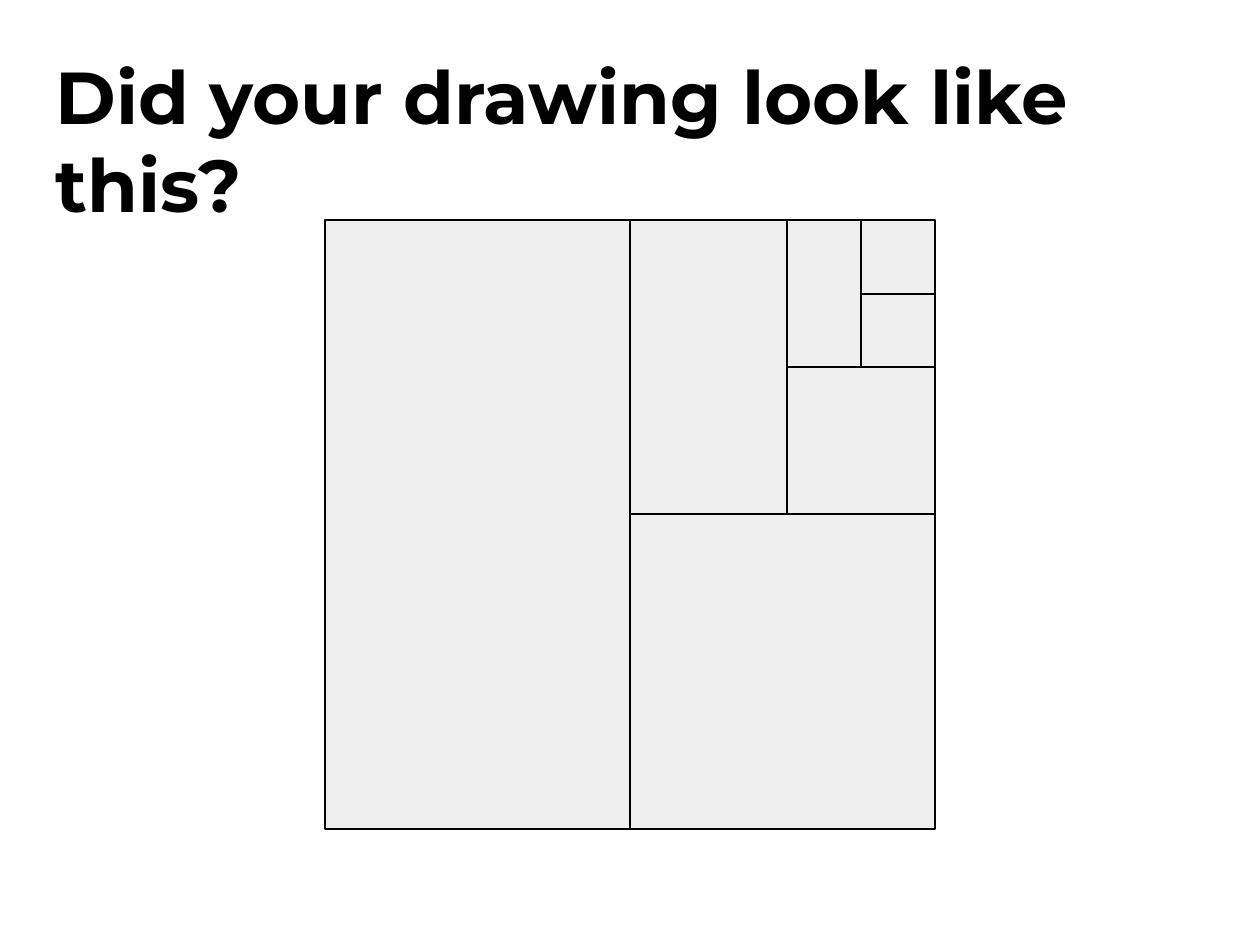
from lxml import etree
from pptx import Presentation, util as u
from pptx.dml.color import RGBColor
from pptx.enum import shapes, text
from pptx.oxml.ns import qn

PX = 914400 / 126
BLACK = RGBColor(0x00, 0x00, 0x00)
WHITE = RGBColor(0xFF, 0xFF, 0xFF)
PAPER = RGBColor(0xEF, 0xEF, 0xEF)

# Edges of the square sheet
LEFT, TOP, RIGHT, BOTTOM = 325, 220, 935, 829
# Each fold cuts the remaining top right corner: a vertical x, then a horizontal y
FOLDS = [(630, 514), (787, 367), (861, 294)]


def px(length):
    return u.Emu(round(length * PX))


def add_text(slide, words, left, top, width, height, *, font, size, color, bold=False):
    box = slide.shapes.add_textbox(px(left), px(top), px(width), px(height))
    frame = box.text_frame
    frame.word_wrap = True
    frame.vertical_anchor = text.MSO_ANCHOR.MIDDLE
    run = frame.paragraphs[0].add_run()
    run.text = words
    run.font.name = font
    run.font.size = u.Pt(size)
    run.font.bold = bold
    run.font.color.rgb = color


def add_outline(line):
    line.color.rgb = BLACK
    line.width = u.Pt(0.75)


def add_sheet(slide):
    sheet = slide.shapes.add_shape(shapes.MSO_SHAPE.RECTANGLE, px(LEFT), px(TOP),
                                   px(RIGHT - LEFT), px(BOTTOM - TOP))
    sheet.shadow.inherit = False
    sheet.fill.solid()
    sheet.fill.fore_color.rgb = PAPER
    add_outline(sheet.line)


def add_cut(slide, x1, y1, x2, y2):
    cut = slide.shapes.add_connector(shapes.MSO_CONNECTOR.STRAIGHT,
                                     px(x1), px(y1), px(x2), px(y2))
    add_outline(cut.line)
    etree.SubElement(cut._element.spPr, qn("a:effectLst"))


def main():
    deck = Presentation()
    deck.slide_width, deck.slide_height = px(1260), px(945)
    slide = deck.slides.add_slide(deck.slide_layouts[6])
    slide.background.fill.solid()
    slide.background.fill.fore_color.rgb = WHITE

    # Title
    add_text(slide, "Did your drawing look like this?", 43, 82, 1174, 115,
             font="Montserrat", size=42, color=BLACK, bold=True)

    # Square divided again and again towards its top right corner
    add_sheet(slide)
    floor = BOTTOM
    for x, y in FOLDS:
        add_cut(slide, x, TOP, x, floor)
        add_cut(slide, x, y, RIGHT, y)
        floor = y

    deck.save("out.pptx")


if __name__ == "__main__":
    main()
